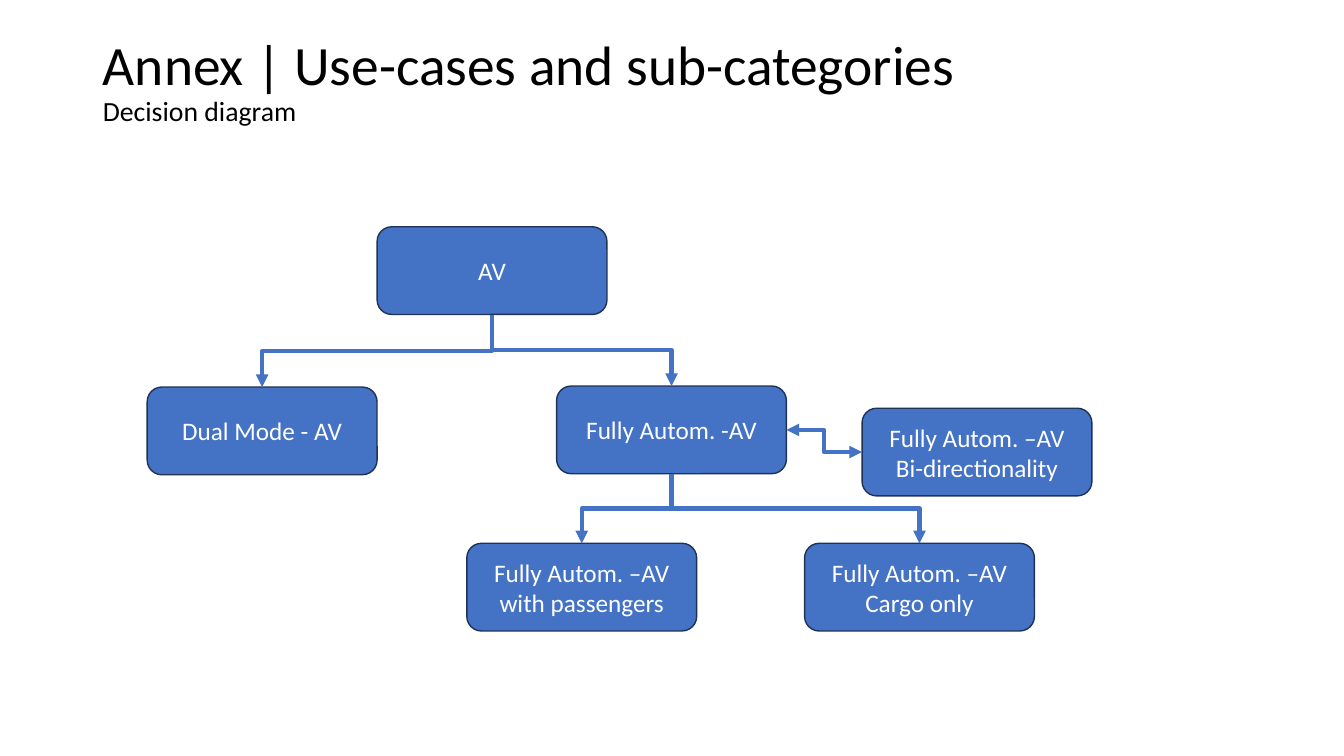
from lxml import etree
from pptx import Presentation
from pptx import util as u
from pptx.dml.color import RGBColor
from pptx.enum import shapes, text
from pptx.oxml import ns

HUES = {"box": "4472C4", "edge": "1E3256", "light": "FFFFFF", "dark": "000000"}
WIDE, HIGH = 2.28, 0.87
TOP, LEFT, LOW, RIGHT = range(4)
NODES = {
    "av": (3.74, 2.25, "AV"),
    "dual": (1.46, 3.84, "Dual Mode - AV"),
    "people": (4.63, 5.39, "Fully Autom. –AV with passengers"),
    "full": (5.52, 3.83, "Fully Autom. -AV"),
    "cargo": (7.98, 5.39, "Fully Autom. –AV\nCargo only"),
    "both": (8.55, 4.05, "Fully Autom. –AV\nBi-directionality"),
}
LINKS = [("av", "dual"), ("av", "full"), ("full", "people"), ("full", "cargo")]


def hue(name):
    """Return the named colour."""
    return RGBColor.from_string(HUES[name])


def style(para, size, name):
    """Format every run of a paragraph."""
    for run in para.runs:
        run.font.name = "Calibri"
        run.font.size = u.Pt(size)
        run.font.color.rgb = hue(name)


def add_title(slide):
    """Fill the title placeholder with heading and subheading."""
    title = slide.shapes.title
    title.left, title.top = u.Inches(0.92), u.Inches(0.37)
    title.width, title.height = u.Inches(11.5), u.Inches(1.45)
    frame = title.text_frame
    frame.text = "Annex | Use-cases and sub-categories\nDecision diagram"
    frame.auto_size = text.MSO_AUTO_SIZE.NONE
    frame.vertical_anchor = text.MSO_ANCHOR.TOP
    frame.margin_top = 0
    for para, size in zip(frame.paragraphs, (39.6, 19.8)):
        para.alignment = text.PP_ALIGN.LEFT
        para.line_spacing = 0.9
        style(para, size, "dark")


def add_node(slide, left, top, label):
    """Add one rounded box of the diagram."""
    node = slide.shapes.add_shape(
        shapes.MSO_SHAPE.ROUNDED_RECTANGLE,
        u.Inches(left), u.Inches(top), u.Inches(WIDE), u.Inches(HIGH))
    node.shadow.inherit = False
    node.fill.solid()
    node.fill.fore_color.rgb = hue("box")
    node.line.color.rgb = hue("edge")
    node.line.width = u.Pt(1)
    frame = node.text_frame
    frame.text = label
    frame.word_wrap = True
    frame.vertical_anchor = text.MSO_ANCHOR.MIDDLE
    for para in frame.paragraphs:
        para.alignment = text.PP_ALIGN.CENTER
        style(para, 18, "light")
    return node


def add_link(slide, start, out, end, into, heads):
    """Join two boxes with an elbow line and arrowheads."""
    link = slide.shapes.add_connector(shapes.MSO_CONNECTOR.ELBOW, 0, 0, 0, 0)
    link.begin_connect(start, out)
    link.end_connect(end, into)
    link.line.color.rgb = hue("box")
    link.line.width = u.Pt(3)
    line = link.line._get_or_add_ln()
    for head in heads:
        etree.SubElement(line, ns.qn("a:" + head), type="triangle")
    etree.SubElement(link._element.spPr, ns.qn("a:effectLst"))
    return link


def add_drop(slide, start, end):
    """Join a box to one below it, turning the elbow upright."""
    link = add_link(slide, start, LOW, end, TOP, ["tailEnd"])
    right = link.end_x > link.begin_x
    mid_x = link.left + link.width // 2
    mid_y = link.top + link.height // 2
    wide, high = link.height, link.width
    link.left, link.top = mid_x - wide // 2, mid_y - high // 2
    link.width, link.height = wide, high
    form = link._element.spPr.find(ns.qn("a:xfrm"))
    form.set("rot", str((270 if right else 90) * 60000))
    form.set("flipH", str(int(right)))


def main():
    """Build and save the slide."""
    deck = Presentation()
    deck.slide_width, deck.slide_height = u.Inches(13.33), u.Inches(7.5)
    slide = deck.slides.add_slide(deck.slide_layouts[5])
    add_title(slide)
    nodes = {key: add_node(slide, *node) for key, node in NODES.items()}
    for start, end in LINKS:
        add_drop(slide, nodes[start], nodes[end])
    add_link(slide, nodes["full"], RIGHT, nodes["both"], LEFT,
             ["headEnd", "tailEnd"])
    deck.save("out.pptx")


if __name__ == "__main__":
    main()
